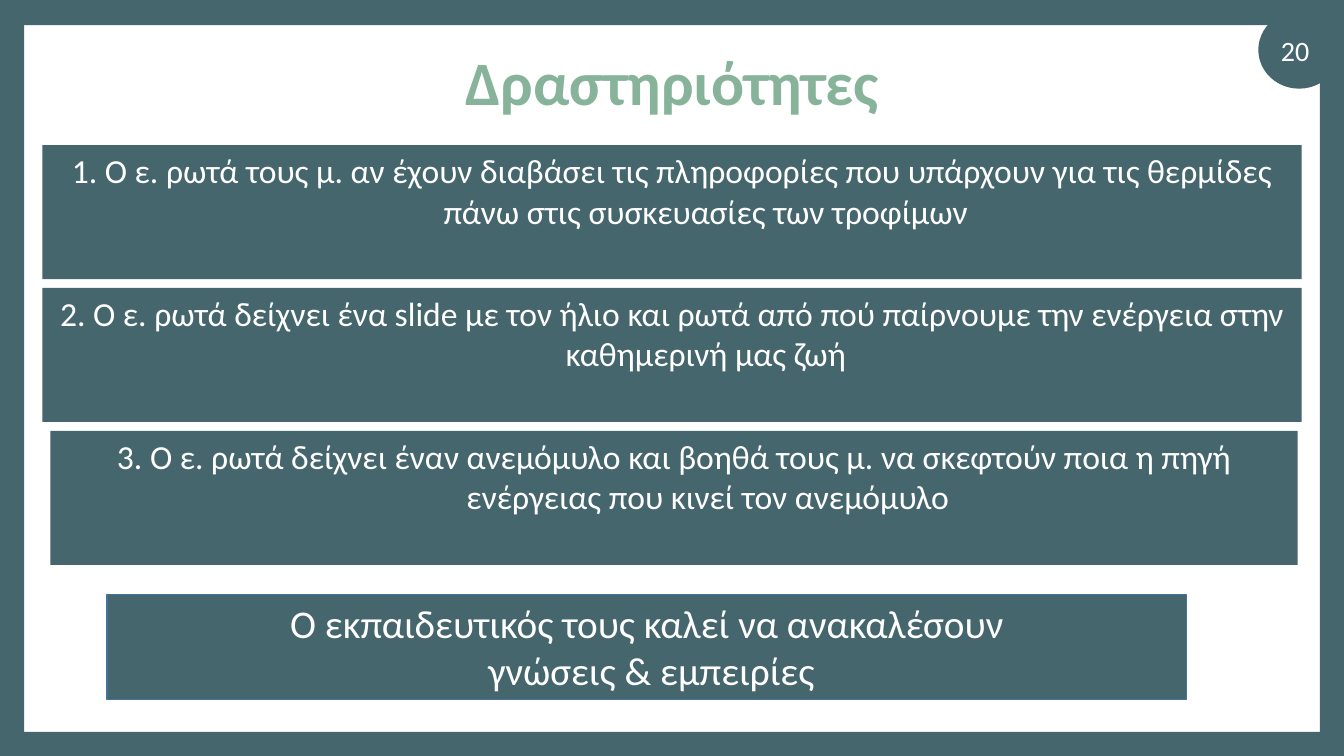
import pptx
import pptx.util
import pptx.dml.color
import pptx.enum.shapes
import pptx.enum.text
import pptx.oxml
from dataclasses import dataclass
from pptx.util import Inches


@dataclass(frozen=True)
class Theme:
    font: str = "Calibri"
    teal: str = "46666D"
    green: str = "87B39A"
    white: str = "FFFFFF"
    outline: str = "43739E"
    title_size: int = 44
    summary_size: int = 28
    activity_size: int = 24
    number_size: int = 20


theme = Theme()
SHAPE = pptx.enum.shapes.MSO_SHAPE
ANCHOR = pptx.enum.text.MSO_ANCHOR
rgb = pptx.dml.color.RGBColor.from_string


def write(shape, *lines, size, color=theme.white, bold=False,
          anchor=ANCHOR.TOP, line_spacing=None, hanging=0, space_percent=0):
    """Fill a shape with centred paragraphs; return nothing."""
    frame = shape.text_frame
    frame.word_wrap = True
    frame.vertical_anchor = anchor
    for index, line in enumerate(lines):
        para = frame.add_paragraph() if index else frame.paragraphs[0]
        para.alignment = pptx.enum.text.PP_ALIGN.CENTER
        if line_spacing:
            para.line_spacing = line_spacing
        properties = para._p.get_or_add_pPr()
        if hanging:
            properties.set("marL", str(Inches(hanging)))
            properties.set("indent", str(-Inches(hanging)))
        if space_percent:
            para.space_before = pptx.util.Pt(0)
            before = properties.find(pptx.oxml.ns.qn("a:spcBef"))
            before.remove(before[0])
            percent = pptx.oxml.parse_xml(
                f'<a:spcPct {pptx.oxml.ns.nsdecls("a")} val="{space_percent * 1000}"/>')
            before.append(percent)
        span = para.add_run()
        span.text = line
        span.font.name = theme.font
        span.font.size = pptx.util.Pt(size)
        span.font.bold = bold
        span.font.color.rgb = rgb(color)


def add_panel(kind, left, top, width, height):
    """Add a teal shape without outline or shadow."""
    panel = slide.shapes.add_shape(
        kind, Inches(left), Inches(top), Inches(width), Inches(height))
    panel.shadow.inherit = False
    panel.fill.solid()
    panel.fill.fore_color.rgb = rgb(theme.teal)
    panel.line.fill.background()
    return panel


deck = pptx.Presentation()
deck.slide_width = Inches(13.33)
deck.slide_height = Inches(7.5)
slide = deck.slides.add_slide(deck.slide_layouts[5])

# Frame and number badge
add_panel(SHAPE.OVAL, 12.48, 0.11, 0.81, 0.77)
for edge in ((0, 0, 13.33, 0.25), (0, 7.26, 13.33, 0.24),
             (13.09, 0.12, 0.24, 7.26), (0, 0.12, 0.24, 7.26)):
    add_panel(SHAPE.RECTANGLE, *edge)

title = slide.shapes.title
title.left, title.top = Inches(0.92), Inches(0.4)
title.width, title.height = Inches(11.5), Inches(0.89)
write(title, "Δραστηριότητες", size=theme.title_size, color=theme.green,
      bold=True, anchor=ANCHOR.MIDDLE, line_spacing=0.9)

number = slide.shapes.add_textbox(
    Inches(12.44), Inches(0.3), Inches(0.81), Inches(0.4))
write(number, "20", size=theme.number_size, anchor=ANCHOR.MIDDLE)

# Closing summary
summary = add_panel(SHAPE.RECTANGLE, 1.06, 5.9, 10.71, 1.04)
summary.line.color.rgb = rgb(theme.outline)
summary.line.width = pptx.util.Pt(1)
write(summary, "Ο εκπαιδευτικός τους καλεί να ανακαλέσουν",
      " γνώσεις & εμπειρίες", size=theme.summary_size)

# Activities: left, width and text of each panel
activities = (
    (0.42, 12.49, "1. Ο ε. ρωτά τους μ. αν έχουν διαβάσει τις πληροφορίες που "
                  "υπάρχουν για τις θερμίδες πάνω στις συσκευασίες των τροφίμων"),
    (0.42, 12.49, "2. Ο ε. ρωτά δείχνει ένα slide με τον ήλιο και ρωτά από πού "
                  "παίρνουμε την ενέργεια στην καθημερινή μας ζωή"),
    (0.5, 12.37, "3. Ο ε. ρωτά δείχνει έναν ανεμόμυλο και βοηθά τους μ. να "
                 "σκεφτούν ποια η πηγή ενέργειας που κινεί τον ανεμόμυλο"),
)
for row, (left, width, text) in enumerate(activities):
    activity = add_panel(SHAPE.RECTANGLE, left, 1.44 + row * 1.417, width, 1.33)
    write(activity, text, size=theme.activity_size, hanging=0.67, space_percent=20)

deck.save("out.pptx")
